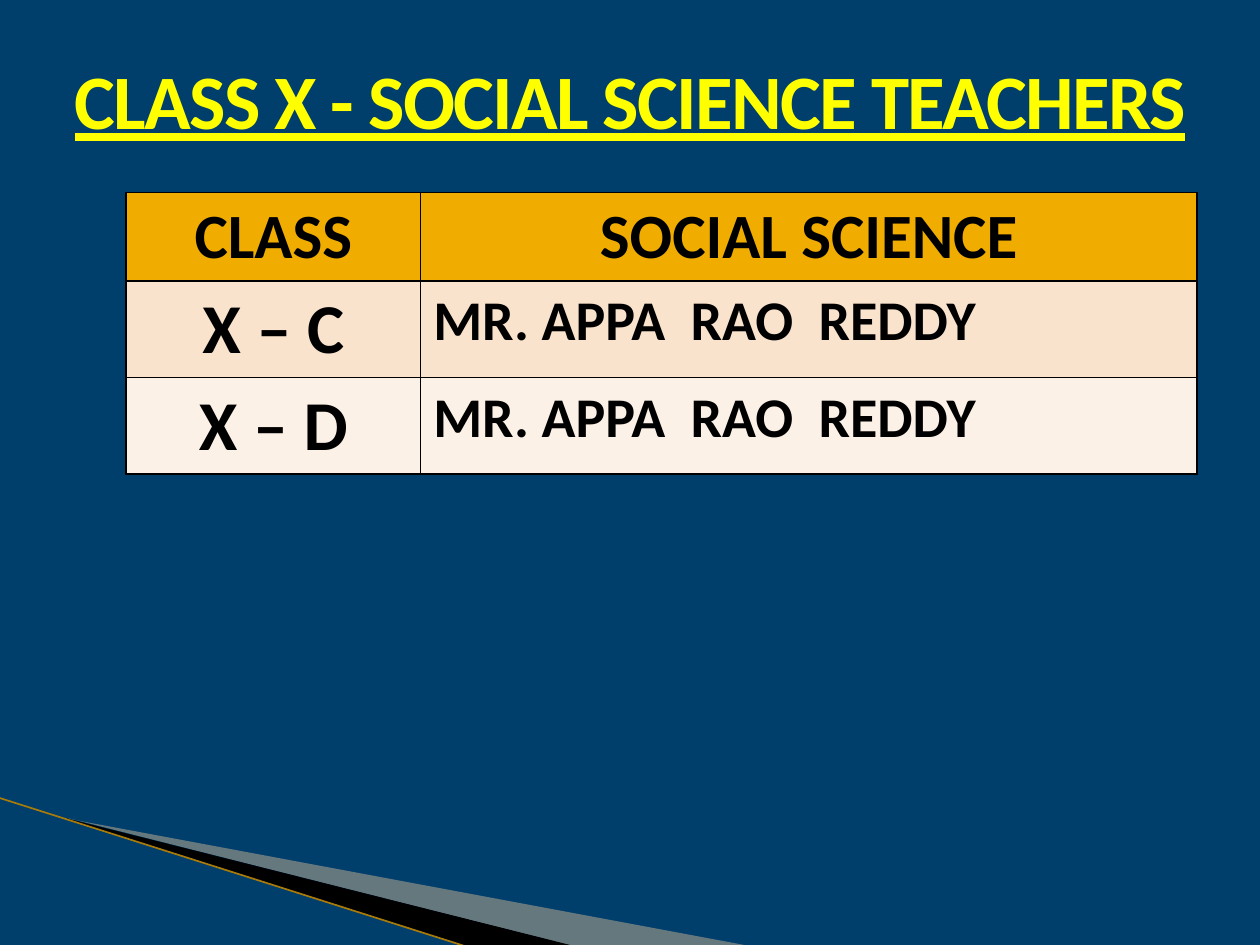
from typing import NamedTuple, Optional

from lxml.etree import SubElement
from pptx import Presentation
from pptx.dml.color import RGBColor
from pptx.enum.text import MSO_ANCHOR, MSO_AUTO_SIZE, PP_ALIGN as Align
from pptx.enum.shapes import MSO_CONNECTOR as Connector
from pptx.oxml.ns import qn
from pptx.util import Cm, Pt

FONT = "Calibri"
BLACK = "000000"


class Wedge(NamedTuple):
    frame: tuple[float, float, float, float]
    points: list[tuple[float, float]]
    color: str
    opacity: Optional[int] = None


class Row(NamedTuple):
    height: float
    fill: str
    texts: tuple[str, str]
    sizes: tuple[int, int]
    aligns: tuple[Align, Align]


WEDGES = [
    Wedge((1.98, 13.89, 10.57, 4.01),
          [(1.4, 16.51), (15.16, 19.08), (11.58, 19.08), (1.4, 16.5)], "FCCF9B", 40),
    Wedge((-0.15, 16.08, 10.57, 2.34),
          [(1.35, 16.5), (11.61, 19.08), (9.45, 19.1), (1.37, 16.52)], BLACK),
]
COLUMN_WIDTHS = (5.94, 15.65)
TEACHER = "MR. APPA  RAO  REDDY"
BODY_ALIGNS = (Align.CENTER, Align.LEFT)
ROWS = [
    Row(1.78, "F0AD00", ("CLASS", "SOCIAL SCIENCE"), (36, 36), (Align.CENTER, Align.CENTER)),
    Row(1.94, "F9E3CC", ("X – C", TEACHER), (40, 32), BODY_ALIGNS),
    Row(1.94, "FCF1E7", ("X – D", TEACHER), (40, 32), BODY_ALIGNS),
]


def paint(fill, color: str) -> None:
    fill.solid()
    fill.fore_color.rgb = RGBColor.from_string(color)


def add_span(para, text: str, size: int, color: str):
    span = para.add_run()
    span.text = text
    font = span.font
    font.name, font.size, font.bold = FONT, Pt(size), True
    font.color.rgb = RGBColor.from_string(color)
    return span


def set_frame(shape, frame: tuple[float, float, float, float]) -> None:
    """Move the frame of a freeform while its outline stays in place."""
    left, top, width, height = (Cm(value) for value in frame)
    outline = shape._element.spPr.find(".//" + qn("a:path"))
    outline.set("w", str(width))
    outline.set("h", str(height))
    for point in outline.iter(qn("a:pt")):
        point.set("x", str(int(point.get("x")) + shape.left - left))
        point.set("y", str(int(point.get("y")) + shape.top - top))
    shape.left, shape.top, shape.width, shape.height = left, top, width, height


def add_wedge(page, wedge: Wedge) -> None:
    start, *rest = [(Cm(x), Cm(y)) for x, y in wedge.points]
    builder = page.shapes.build_freeform(*start)
    builder.add_line_segments(rest, close=True)
    shape = builder.convert_to_shape()
    set_frame(shape, wedge.frame)
    shape.shadow.inherit = False
    shape.line.fill.background()
    paint(shape.fill, wedge.color)
    if wedge.opacity is not None:
        tint = shape.fill._xPr.find(".//" + qn("a:srgbClr"))
        SubElement(tint, qn("a:alpha"), val=str(wedge.opacity * 1000))


def add_edge_line(page) -> None:
    line = page.shapes.add_connector(Connector.STRAIGHT, Cm(-0.03), Cm(16.08), Cm(9.46), Cm(19.1))
    paint(line.line.fill, "A87B0A")
    line.line.width = Pt(0.95)
    SubElement(line._element.spPr, qn("a:effectLst"))


def add_title(page) -> None:
    box = page.shapes.add_textbox(0, 0, Cm(25.4), Cm(3.07))
    frame = box.text_frame
    frame.word_wrap = True
    frame.auto_size = MSO_AUTO_SIZE.SHAPE_TO_FIT_TEXT
    para = frame.paragraphs[0]
    para.alignment, para.line_spacing = Align.CENTER, 1.5
    properties = para._p.get_or_add_pPr()
    properties.set("marL", str(Cm(0.97)))
    properties.set("indent", str(Cm(-0.97)))
    span = add_span(para, "CLASS X - SOCIAL SCIENCE TEACHERS", 44, "FFFF00")
    span.font.underline = True
    span._r.get_or_add_rPr().set("spc", "-100")


def add_borders(cell) -> None:
    properties = cell._tc.get_or_add_tcPr()
    for index, side in enumerate(("lnL", "lnR", "lnT", "lnB")):
        border = properties.makeelement(qn(f"a:{side}"), {"w": str(Pt(1))})
        properties.insert(index, border)
        solid = SubElement(border, qn("a:solidFill"))
        SubElement(solid, qn("a:srgbClr"), val=BLACK)


def add_teacher_table(page) -> None:
    height = sum(row.height for row in ROWS)
    table = page.shapes.add_table(
        len(ROWS), len(COLUMN_WIDTHS), Cm(2.54), Cm(3.88), Cm(sum(COLUMN_WIDTHS)), Cm(height)
    ).table
    for column, width in zip(table.columns, COLUMN_WIDTHS):
        column.width = Cm(width)
    for line, row in zip(table.rows, ROWS):
        line.height = Cm(row.height)
        for cell, text, size, align in zip(line.cells, row.texts, row.sizes, row.aligns):
            paint(cell.fill, row.fill)
            add_borders(cell)
            cell.vertical_anchor = MSO_ANCHOR.TOP
            para = cell.text_frame.paragraphs[0]
            para.alignment = align
            add_span(para, text, size, BLACK)


def main() -> None:
    deck = Presentation()
    deck.slide_width, deck.slide_height = Cm(25.4), Cm(19.05)
    page = deck.slides.add_slide(deck.slide_layouts[6])
    paint(page.background.fill, "003E6C")

    # Corner decoration
    for wedge in WEDGES:
        add_wedge(page, wedge)
    add_edge_line(page)

    # Title and table
    add_title(page)
    add_teacher_table(page)
    deck.save("out.pptx")


if __name__ == "__main__":
    main()
